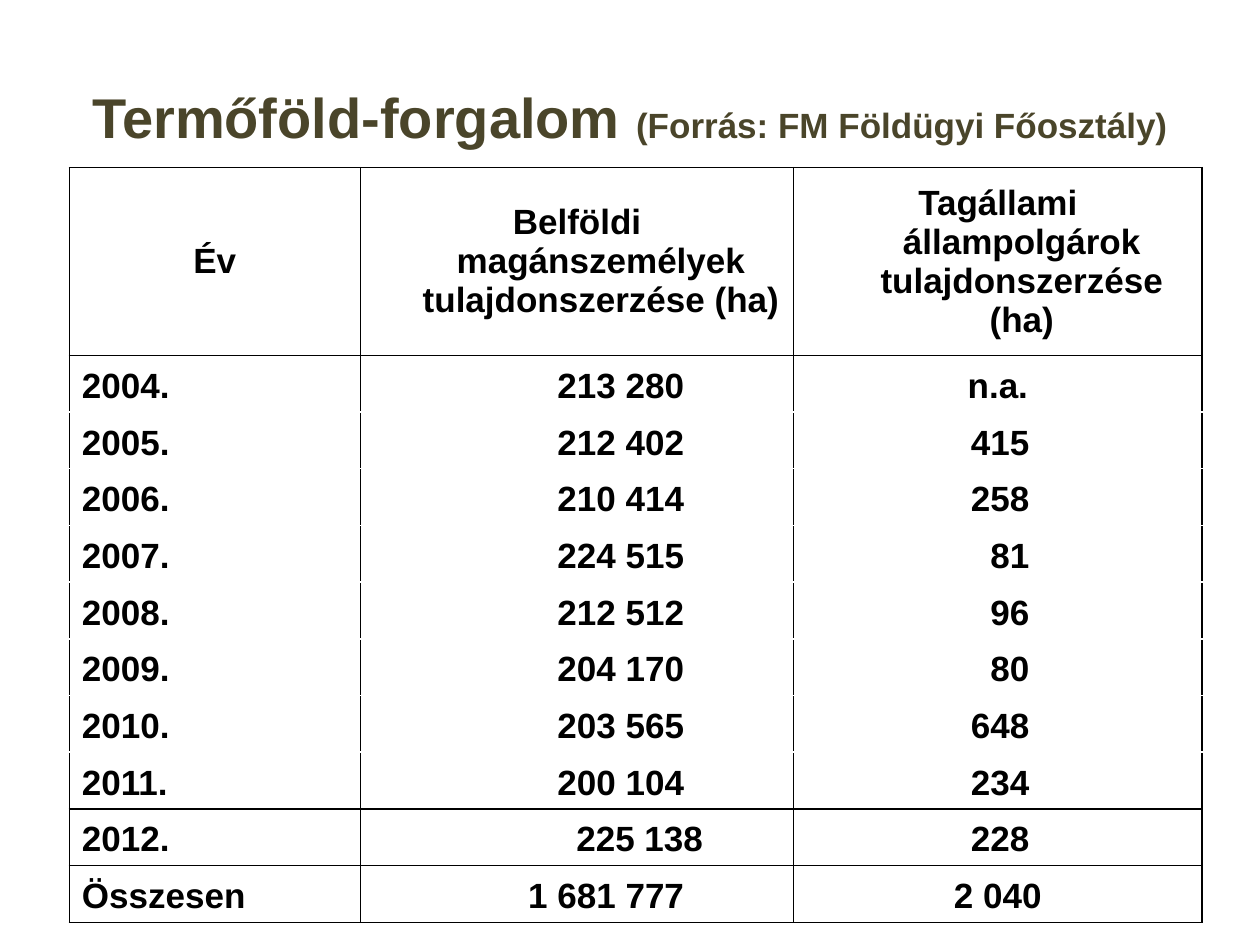
from lxml.etree import SubElement
from pptx import Presentation
from pptx.dml.color import RGBColor
from pptx.enum.text import MSO_ANCHOR, PP_ALIGN
from pptx.oxml.ns import qn
from pptx.util import Inches, Pt

COLORS = {"title": "4A452A", "text": "000000", "border": "000000"}
FONT = "Arial"
HEADERS = [
    "Év",
    "Belföldi magánszemélyek tulajdonszerzése (ha)",
    "Tagállami állampolgárok tulajdonszerzése (ha)",
]
ROWS = [
    ("2004.", "213 280", "n.a."),
    ("2005.", "212 402", "415"),
    ("2006.", "210 414", "258"),
    ("2007.", "224 515", "81"),
    ("2008.", "212 512", "96"),
    ("2009.", "204 170", "80"),
    ("2010.", "203 565", "648"),
    ("2011.", "200 104", "234"),
    ("2012.", "225 138", "228"),
    ("Összesen", "1 681 777", "2 040"),
]
COLUMN_WIDTHS = [2.31, 3.44, 3.24]
HEADER_HEIGHT, ROW_HEIGHT = 1.49, 0.45
# Right margins that line the figures up by their last digit
FIGURE_MARGINS = {1: 0.87, 2: 1.37}
LAST_YEAR_MARGIN = 0.72
HANGING_INDENT = 0.38


def add_text(paragraph, text, size=20, color="text"):
    run = paragraph.add_run()
    run.text = text
    run.font.name = FONT
    run.font.size = Pt(size)
    run.font.bold = True
    run.font.color.rgb = RGBColor.from_string(COLORS[color])


def set_borders(cell, sides):
    """Draw one-point lines on the given sides, from the letters L, R, T and B."""
    properties = cell._tc.get_or_add_tcPr()
    for position, side in enumerate(sides):
        line = SubElement(properties, qn(f"a:ln{side}"), w=str(Pt(1)))
        fill = SubElement(line, qn("a:solidFill"))
        SubElement(fill, qn("a:srgbClr"), val=COLORS["border"])
        properties.insert(position, line)


def fill_cell(cell, text, align=PP_ALIGN.LEFT, anchor=MSO_ANCHOR.BOTTOM,
              margin_right=None, sides="LR"):
    cell.fill.background()
    cell.vertical_anchor = anchor
    paragraph = cell.text_frame.paragraphs[0]
    paragraph.alignment = align
    if margin_right is not None:
        cell.margin_right = Inches(margin_right)
    else:
        properties = paragraph._p.get_or_add_pPr()
        properties.set("marL", str(Inches(HANGING_INDENT)))
        properties.set("indent", str(-Inches(HANGING_INDENT)))
    add_text(paragraph, text)
    set_borders(cell, sides)


def add_title(slide, left, top, width, height):
    title = slide.shapes.title
    title.left, title.top = Inches(left), Inches(top)
    title.width, title.height = Inches(width), Inches(height)
    title.text_frame.vertical_anchor = MSO_ANCHOR.MIDDLE
    paragraph = title.text_frame.paragraphs[0]
    paragraph.alignment = PP_ALIGN.CENTER
    add_text(paragraph, "Termőföld-forgalom ", size=32, color="title")
    add_text(paragraph, "(Forrás: FM Földügyi Főosztály)", color="title")


def add_land_table(slide, left, top, width, height):
    table = slide.shapes.add_table(
        len(ROWS) + 1, len(HEADERS),
        Inches(left), Inches(top), Inches(width), Inches(height),
    ).table
    table.first_row = table.horz_banding = False
    for column, column_width in zip(table.columns, COLUMN_WIDTHS):
        column.width = Inches(column_width)
    for index, row in enumerate(table.rows):
        row.height = Inches(ROW_HEIGHT if index else HEADER_HEIGHT)

    # Header row
    for column, text in enumerate(HEADERS):
        fill_cell(table.cell(0, column), text, align=PP_ALIGN.CENTER,
                  anchor=MSO_ANCHOR.MIDDLE, sides="LRTB")

    # Years and total: the years 2004 to 2011 form one block without inner rules
    for row, values in enumerate(ROWS, start=1):
        sides = {1: "LRT", 8: "LRB", 9: "LRTB", 10: "LRTB"}.get(row, "LR")
        for column, text in enumerate(values):
            style = {"sides": sides}
            if column == 2 and text in ("n.a.", "2 040"):
                style["align"] = PP_ALIGN.CENTER
            elif column:
                last_year = column == 1 and values[0] == "2012."
                style["align"] = PP_ALIGN.RIGHT
                style["margin_right"] = LAST_YEAR_MARGIN if last_year else FIGURE_MARGINS[column]
            fill_cell(table.cell(row, column), text, **style)


def main():
    presentation = Presentation()
    presentation.slide_width, presentation.slide_height = Inches(10), Inches(7.5)
    slide = presentation.slides.add_slide(presentation.slide_layouts[5])
    add_title(slide, 0.5, 0.3, 9, 1.25)
    add_land_table(slide, 0.55, 1.33, 9, 5.98)
    presentation.save("out.pptx")


if __name__ == "__main__":
    main()
